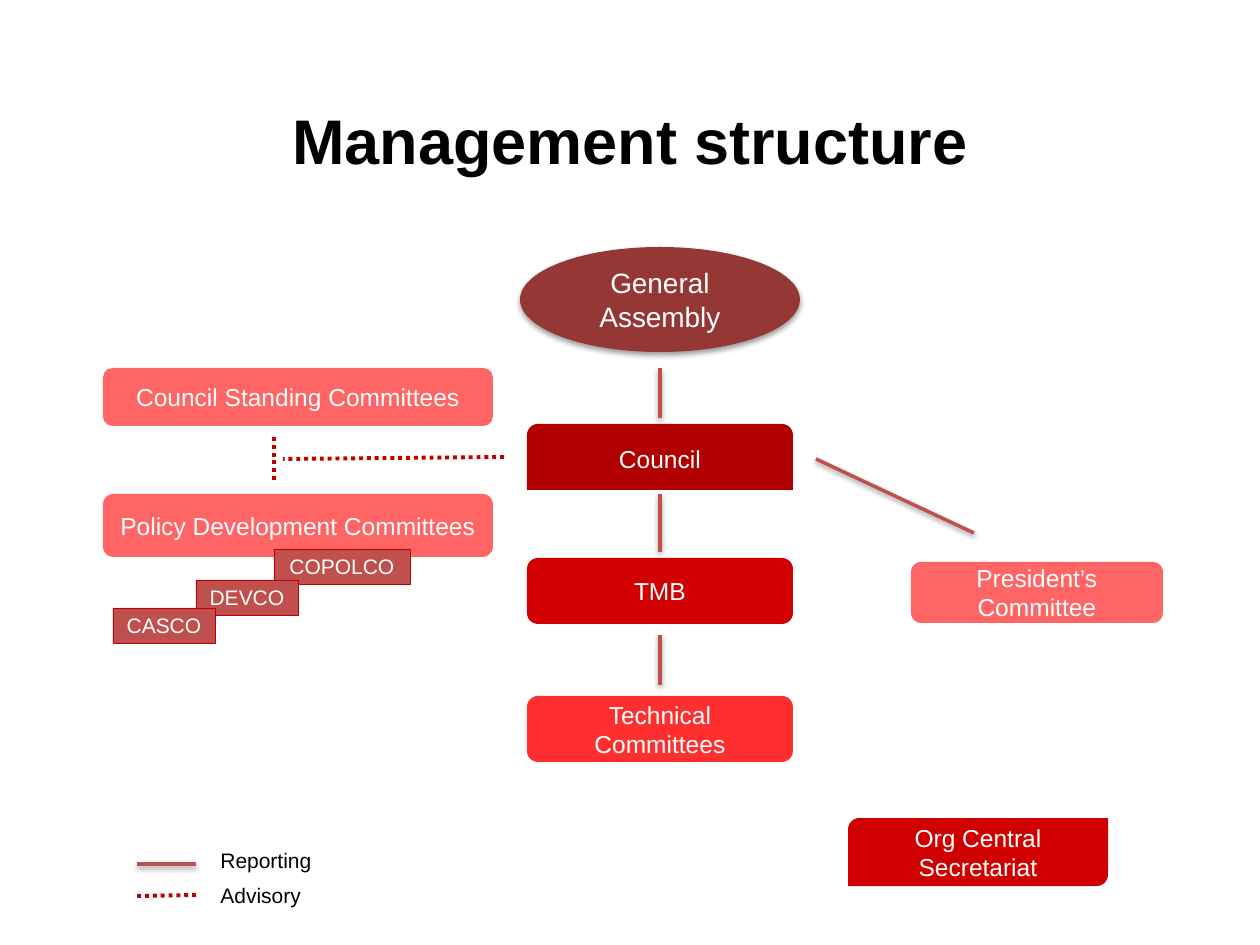
from lxml import etree
from pptx import Presentation
from pptx.dml.color import RGBColor
from pptx.enum.dml import MSO_LINE
from pptx.enum.shapes import MSO_CONNECTOR, MSO_SHAPE
from pptx.enum.text import MSO_ANCHOR, PP_ALIGN
from pptx.oxml.ns import qn
from pptx.util import Pt

PX = 914400 / 126
OVAL = MSO_SHAPE.OVAL
TOP = MSO_SHAPE.ROUND_2_SAME_RECTANGLE
DIAG = MSO_SHAPE.ROUND_2_DIAG_RECTANGLE
ALT = MSO_SHAPE.FLOWCHART_ALTERNATE_PROCESS
ROUND = MSO_SHAPE.ROUNDED_RECTANGLE
RECT = MSO_SHAPE.RECTANGLE
STRAIGHT = MSO_CONNECTOR.STRAIGHT
DOT = MSO_LINE.ROUND_DOT
MID = MSO_ANCHOR.MIDDLE
HIGH = MSO_ANCHOR.TOP
CENTER = PP_ALIGN.CENTER
LEFT = PP_ALIGN.LEFT

HUES = {
    "black": "000000", "white": "FFFFFF", "wine": "953735",
    "dark": "B00000", "red": "D20000", "desk": "D00000",
    "bright": "FF2F2F", "pink": "FF6565", "brick": "C0504D",
    "edge": "C00000",
}
HUES = {name: RGBColor.from_string(code) for name, code in HUES.items()}


def write(shape, lines, size, hue, align, bold=False, gap=0):
    frame = shape.text_frame
    frame.text = "\n".join(lines)
    for para in frame.paragraphs:
        para.alignment = align
        para.space_after = Pt(gap)
        look = {"name": "Arial", "size": Pt(size), "bold": bold}
        for key, value in look.items():
            setattr(para.font, key, value)
        para.font.color.rgb = HUES[hue]


def shade(shape, shown):
    props = shape._element.spPr
    for old in props.findall(qn("a:effectLst")):
        props.remove(old)
    effects = etree.SubElement(props, qn("a:effectLst"))
    if shown:
        outer = etree.SubElement(effects, qn("a:outerShdw"), blurRad="40000",
                                 dist="20000", dir="5400000", rotWithShape="0")
        tint = etree.SubElement(outer, qn("a:srgbClr"), val="000000")
        etree.SubElement(tint, qn("a:alpha"), val="38000")


deck = Presentation()
deck.slide_width = round(1260 * PX)
deck.slide_height = round(945 * PX)
slide = deck.slides.add_slide(deck.slide_layouts[6])
shapes = slide.shapes

texts = [
    ((78, 80, 1104, 119), ["Management structure"], MID,
     {"size": 36, "hue": "black", "align": CENTER, "bold": True}),
    ((208, 841, 270, 74), ["Reporting", "Advisory"], HIGH,
     {"size": 12, "hue": "black", "align": LEFT, "gap": 6}),
]
for area, lines, anchor, look in texts:
    box = shapes.add_textbox(*(round(n * PX) for n in area))
    box.text_frame.word_wrap = True
    box.text_frame.vertical_anchor = anchor
    write(box, lines, **look)

nodes = [
    (OVAL, (520, 247, 280, 105), "wine", 16, "General Assembly"),
    (TOP, (527, 424, 266, 66), "dark", 14, "Council"),
    (ALT, (527, 558, 266, 66), "red", 14, "TMB"),
    (ROUND, (527, 696, 266, 66), "bright", 14, "Technical Committees"),
    (ALT, (911, 562, 252, 61), "pink", 14, "President’s Committee"),
    (ALT, (103, 368, 390, 58), "pink", 14, "Council Standing Committees"),
    (ALT, (103, 494, 390, 63), "pink", 14, "Policy Development Committees"),
    (DIAG, (848, 818, 260, 68), "desk", 14, "Org Central Secretariat"),
    (RECT, (274, 549, 136, 35), "brick", 12, "COPOLCO"),
    (RECT, (196, 580, 102, 35), "brick", 12, "DEVCO"),
    (RECT, (113, 608, 102, 35), "brick", 12, "CASCO"),
]
for kind, area, hue, size, label in nodes:
    node = shapes.add_shape(kind, *(round(n * PX) for n in area))
    node.fill.solid()
    node.fill.fore_color.rgb = HUES[hue]
    if kind == RECT:
        node.line.color.rgb = HUES["edge"]
        node.line.width = Pt(0.25)
    else:
        node.line.fill.background()
    shade(node, kind == OVAL)
    node.text_frame.word_wrap = kind != RECT
    node.text_frame.vertical_anchor = MID
    write(node, [label], size, "white", CENTER)

styles = {
    "report": {"hue": "brick", "width": 2, "dash": None},
    "advise": {"hue": "edge", "width": 2.25, "dash": DOT},
}
links = {
    "report": [(660, 368, 660, 418), (660, 494, 660, 552),
               (660, 635, 660, 685), (816, 459, 974, 533),
               (196, 864, 137, 864)],
    "advise": [(274, 437, 274, 480), (504, 457, 283, 459),
               (196, 895, 137, 896)],
}
for kind, ends in links.items():
    style = styles[kind]
    for end in ends:
        link = shapes.add_connector(STRAIGHT, *(round(n * PX) for n in end))
        link.line.color.rgb = HUES[style["hue"]]
        link.line.width = Pt(style["width"])
        link.line.dash_style = style["dash"]
        shade(link, kind == "report")

deck.save("out.pptx")
